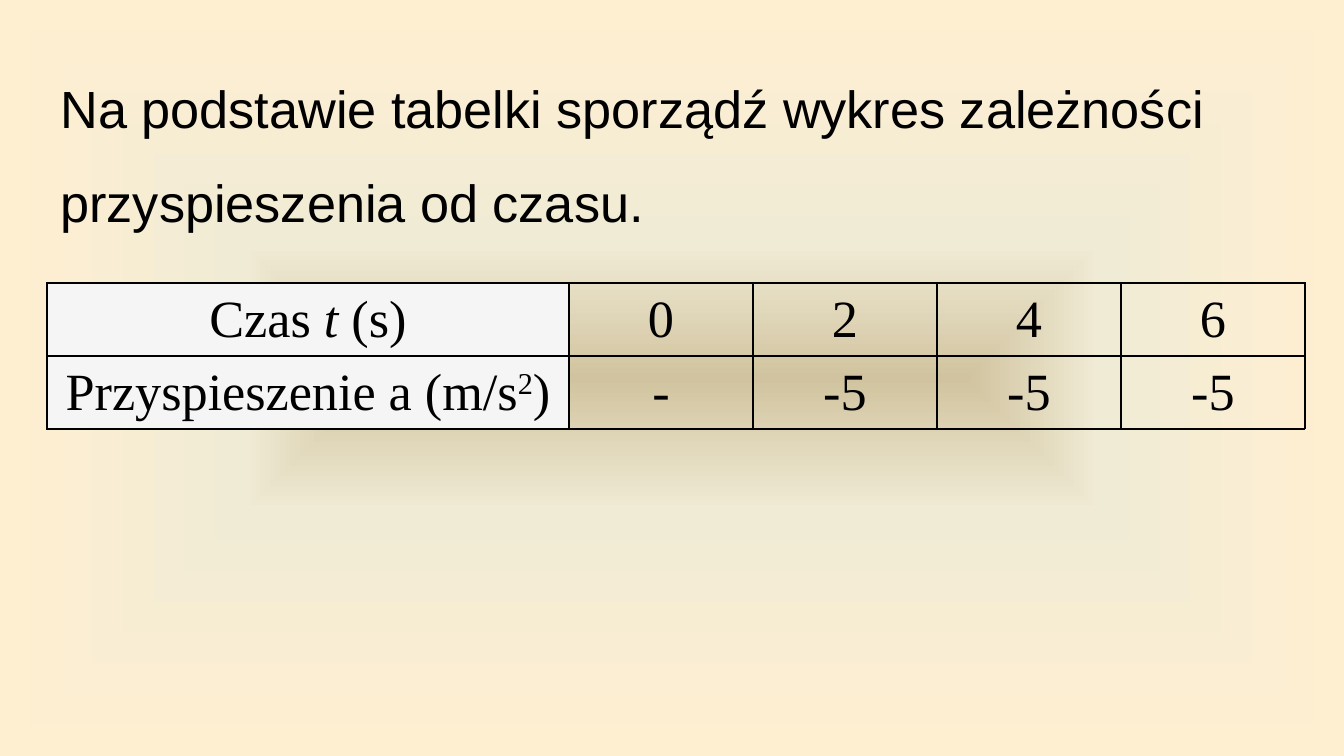
from dataclasses import dataclass

import pptx
import pptx.dml.color
import pptx.enum.text
import pptx.oxml
import pptx.oxml.ns
import pptx.util

EMU_PER_PX = 914400 / 134.4
COLORS = {
    "text": "000000",
    "label": "F5F5F5",
    "inner": "D1C39F",
    "middle": "F0EBD5",
    "outer": "FFEFD1",
}
BACKGROUND_STOPS = ((0, "inner"), (35, "middle"), (100, "outer"))
LEFT, WIDTH = 47, 1257
LABEL_WIDTH, VALUE_WIDTH, ROW_HEIGHT = 522, 184, 73
NS = pptx.oxml.ns.nsdecls("a")


@dataclass
class Run:
    text: str
    italic: bool = False
    baseline: int = 0


@dataclass
class Row:
    label: list[Run]
    values: list[str]


TITLE = "Na podstawie tabelki sporządź wykres zależności przyspieszenia od czasu."
ROWS = [
    Row([Run("Czas "), Run("t", italic=True), Run(" (s)")], ["0", "2", "4", "6"]),
    Row([Run("Przyspieszenie a (m/s"), Run("2", baseline=30), Run(")")],
        ["-", "-5", "-5", "-5"]),
]


def px(n: int) -> pptx.util.Emu:
    return pptx.util.Emu(round(n * EMU_PER_PX))


def rgb(name: str) -> pptx.dml.color.RGBColor:
    return pptx.dml.color.RGBColor.from_string(COLORS[name])


def add_run(p, run: Run, font: str) -> None:
    r = p.add_run()
    r.text = run.text
    r.font.name = font
    r.font.size = pptx.util.Pt(28)
    r.font.color.rgb = rgb("text")
    if run.italic:
        r.font.italic = True
    if run.baseline:
        r.font._element.set("baseline", str(run.baseline * 1000))


def set_background(slide) -> None:
    """Fill the slide with a gradient that spreads from its centre."""
    slide.background.fill.solid()
    stops = "".join(
        f'<a:gs pos="{pos * 1000}"><a:srgbClr val="{COLORS[name]}"/></a:gs>'
        for pos, name in BACKGROUND_STOPS
    )
    gradient = pptx.oxml.parse_xml(
        f'<a:gradFill {NS}><a:gsLst>{stops}</a:gsLst><a:path path="shape">'
        '<a:fillToRect l="50000" t="50000" r="50000" b="50000"/>'
        "</a:path></a:gradFill>"
    )
    bg = slide.element.find(".//" + pptx.oxml.ns.qn("p:bgPr"))
    bg.replace(bg[0], gradient)


def set_title(slide) -> None:
    sp = slide.shapes.title
    sp.left, sp.top, sp.width, sp.height = px(LEFT), px(38), px(WIDTH), px(192)
    tf = sp.text_frame
    tf.word_wrap = True
    tf.auto_size = pptx.enum.text.MSO_AUTO_SIZE.NONE
    tf.vertical_anchor = pptx.enum.text.MSO_ANCHOR.TOP
    p = tf.paragraphs[0]
    p.alignment = pptx.enum.text.PP_ALIGN.LEFT
    p.line_spacing = 1.5
    add_run(p, Run(TITLE), "Arial")


def set_borders(cell) -> None:
    tc_pr = cell._tc.get_or_add_tcPr()
    for side in ("lnL", "lnR", "lnT", "lnB"):
        tc_pr.append(pptx.oxml.parse_xml(
            f'<a:{side} {NS} w="{pptx.util.Pt(0.75)}"><a:solidFill>'
            f'<a:srgbClr val="{COLORS["text"]}"/></a:solidFill></a:{side}>'
        ))


def fill_cell(cell, runs: list[Run], is_label: bool) -> None:
    set_borders(cell)
    if is_label:
        cell.fill.solid()
        cell.fill.fore_color.rgb = rgb("label")
    else:
        cell.fill.background()
    cell.vertical_anchor = pptx.enum.text.MSO_ANCHOR.MIDDLE
    cell.margin_top = cell.margin_bottom = pptx.util.Inches(0.04)
    p = cell.text_frame.paragraphs[0]
    p.alignment = pptx.enum.text.PP_ALIGN.CENTER
    for run in runs:
        add_run(p, run, "Times New Roman")


def add_data_table(slide) -> None:
    n_cols = 1 + len(ROWS[0].values)
    table = slide.shapes.add_table(
        len(ROWS), n_cols, px(LEFT), px(283), px(WIDTH), px(ROW_HEIGHT * len(ROWS))
    ).table
    table.first_row = table.horz_banding = False
    for i, column in enumerate(table.columns):
        column.width = px(VALUE_WIDTH if i else LABEL_WIDTH)
    for i, row in enumerate(ROWS):
        table.rows[i].height = px(ROW_HEIGHT)
        contents = [row.label] + [[Run(value)] for value in row.values]
        for j, runs in enumerate(contents):
            fill_cell(table.cell(i, j), runs, is_label=j == 0)


def main() -> None:
    prs = pptx.Presentation()
    prs.slide_width, prs.slide_height = px(1344), px(756)
    slide = prs.slides.add_slide(prs.slide_layouts.get_by_name("Title Only"))
    set_background(slide)
    set_title(slide)
    add_data_table(slide)
    prs.save("out.pptx")


if __name__ == "__main__":
    main()
